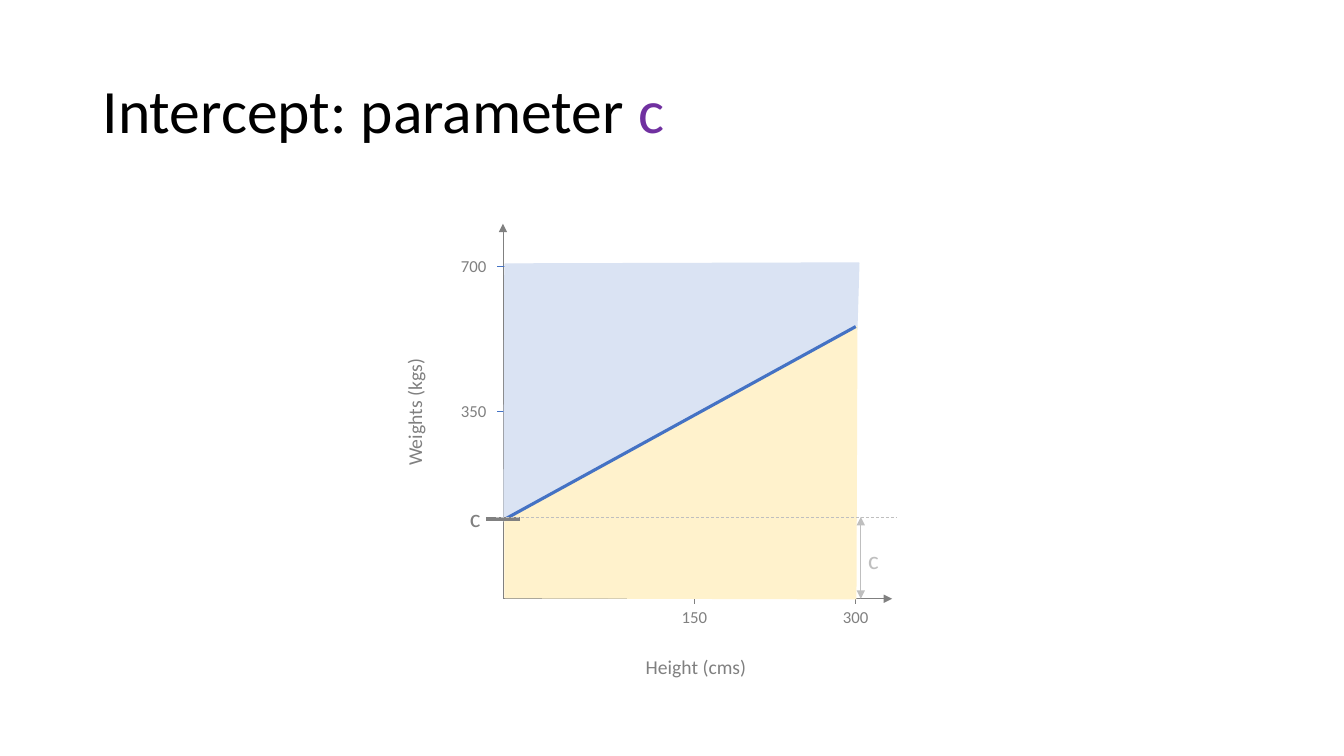
from dataclasses import dataclass

from lxml.etree import SubElement
from pptx import Presentation
from pptx.dml.color import RGBColor
from pptx.enum.dml import MSO_LINE
from pptx.enum.text import MSO_ANCHOR, PP_ALIGN
from pptx.oxml.ns import qn
from pptx.slide import Slide
from pptx.util import Pt

FONT = "Calibri"
BLACK, GREY, PALE_GREY = "000000", "808080", "BFBFBF"
BLUE, PURPLE = "4472C4", "7030A0"
PALE_BLUE, PALE_YELLOW = "DAE3F3", "FFF2CC"

# Chart positions, in points
AXIS_X, AXIS_Y = 359.28, 427.68
INTERCEPT_Y, GUIDE_Y = 370.8, 369.36
X_150, X_300 = 496.08, 611.28
Y_350, Y_700 = 293.76, 190.08
GAP_X = 614.88

Point = tuple[float, float]


@dataclass
class Line:
    start: Point
    end: Point
    color: str = GREY
    width: float = 0.5
    start_arrow: bool = False
    end_arrow: bool = False
    dashed: bool = False


@dataclass
class Label:
    text: str
    center: Point
    width: float
    height: float
    size: float
    color: str = GREY
    rotation: float = 0


@dataclass
class Region:
    corners: list[Point]
    color: str


def rgb(color: str) -> RGBColor:
    return RGBColor.from_string(color)


def add_span(para, text: str, size: float, color: str) -> None:
    span = para.add_run()
    span.text = text
    span.font.name = FONT
    span.font.size = Pt(size)
    span.font.color.rgb = rgb(color)


def draw_line(page: Slide, line: Line) -> None:
    ends = [Pt(value) for value in line.start + line.end]
    connector = page.shapes.add_connector(1, *ends)
    connector.line.color.rgb = rgb(line.color)
    connector.line.width = Pt(line.width)
    if line.dashed:
        connector.line.dash_style = MSO_LINE.DASH
    properties = connector.line._get_or_add_ln()
    for tag, wanted in (("a:headEnd", line.start_arrow), ("a:tailEnd", line.end_arrow)):
        if wanted:
            SubElement(properties, qn(tag), type="triangle")
    SubElement(connector._element.spPr, qn("a:effectLst"))


def draw_label(page: Slide, label: Label) -> None:
    left = label.center[0] - label.width / 2
    top = label.center[1] - label.height / 2
    box = page.shapes.add_textbox(Pt(left), Pt(top), Pt(label.width), Pt(label.height))
    box.rotation = label.rotation
    box.text_frame.word_wrap = False
    para = box.text_frame.paragraphs[0]
    para.alignment = PP_ALIGN.CENTER
    add_span(para, label.text, label.size, label.color)


def draw_region(page: Slide, region: Region) -> None:
    corners = [(Pt(x), Pt(y)) for x, y in region.corners]
    builder = page.shapes.build_freeform(*corners[0])
    builder.add_line_segments(corners[1:], close=True)
    shape = builder.convert_to_shape()
    shape.shadow.inherit = False
    shape.fill.solid()
    shape.fill.fore_color.rgb = rgb(region.color)
    shape.line.color.rgb = rgb(region.color)
    shape.line.width = Pt(1)


def draw_title(page: Slide) -> None:
    box = page.shapes.add_textbox(Pt(66.24), Pt(28.8), Pt(828), Pt(104.4))
    box.text_frame.word_wrap = True
    box.text_frame.vertical_anchor = MSO_ANCHOR.MIDDLE
    para = box.text_frame.paragraphs[0]
    para.line_spacing = 0.9
    add_span(para, "Intercept: parameter ", 44, BLACK)
    add_span(para, "c", 44, PURPLE)


def x_tick(x: float) -> Line:
    return Line((x, AXIS_Y - 3.6), (x, AXIS_Y + 3.6))


def y_tick(y: float) -> Line:
    return Line((AXIS_X + 4.32, y), (AXIS_X - 4.32, y), BLUE)


def tick_label(text: str, x: float, y: float) -> Label:
    return Label(text, (x, y), 33.12, 21.6, 12)


# Items from back to front
ITEMS = [
    # Axis names
    Label("Height (cms)", (497.16, 476.64), 87.12, 24.48, 14),
    Label("Weights (kgs)", (296.28, 294.48), 91.44, 24.48, 14, rotation=270),
    # Axes
    Line((AXIS_X, AXIS_Y), (AXIS_X, 159.84), end_arrow=True),
    Line((AXIS_X, AXIS_Y), (637.2, AXIS_Y), end_arrow=True),
    # Ticks
    x_tick(X_300),
    tick_label("300", X_300, 440.64),
    x_tick(X_150),
    tick_label("150", X_150, 440.64),
    y_tick(Y_700),
    tick_label("700", 338.4, Y_700),
    y_tick(Y_350),
    tick_label("350", 338.4, Y_350),
    # Regions above and below the fitted line
    Region([(612, 235.44), (613.44, 187.92), (360.72, 188.64), (360, 372.24)], PALE_BLUE),
    Region([(360.72, INTERCEPT_Y), (360.72, 426.96), (X_300, AXIS_Y), (612, 233.28)], PALE_YELLOW),
    Line((360.72, INTERCEPT_Y), (X_300, 233.28), BLUE, 2.25),
    # Intercept mark
    Line((347.04, INTERCEPT_Y), (371.52, INTERCEPT_Y), width=3),
    Label("c", (339.48, GUIDE_Y), 22.32, 28.8, 18),
    # Intercept height
    Line((354.24, GUIDE_Y), (640.8, GUIDE_Y), PALE_GREY, dashed=True),
    Line((GAP_X, GUIDE_Y), (GAP_X, AXIS_Y), PALE_GREY, start_arrow=True, end_arrow=True),
    Label("c", (623.88, 399.6), 22.32, 28.8, 18, PALE_GREY),
]

DRAWERS = {Line: draw_line, Label: draw_label, Region: draw_region}


def main() -> None:
    deck = Presentation()
    deck.slide_width, deck.slide_height = Pt(960), Pt(540)
    page = deck.slides.add_slide(deck.slide_layouts[6])
    for item in ITEMS:
        DRAWERS[type(item)](page, item)
    draw_title(page)
    deck.save("out.pptx")


if __name__ == "__main__":
    main()
